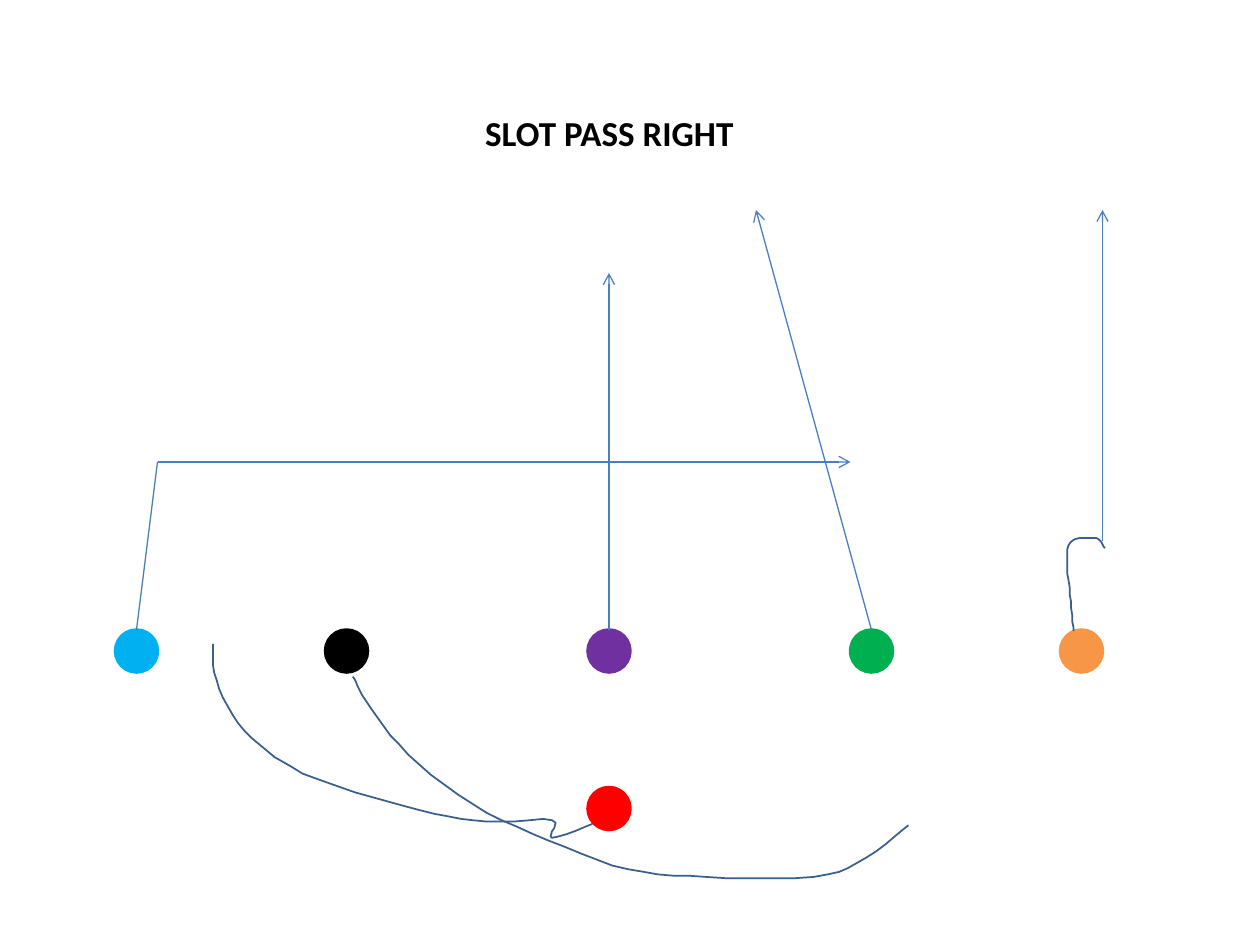
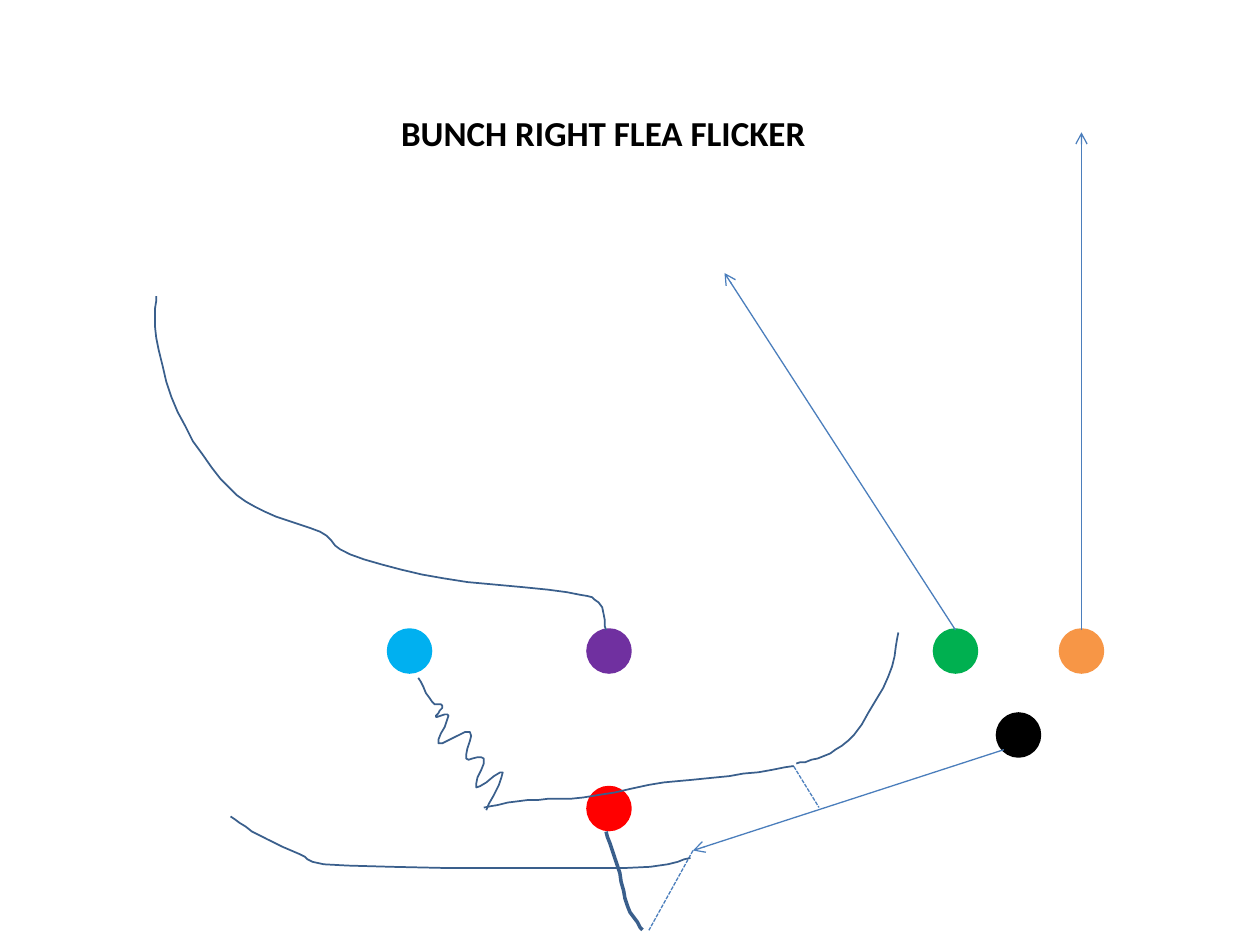
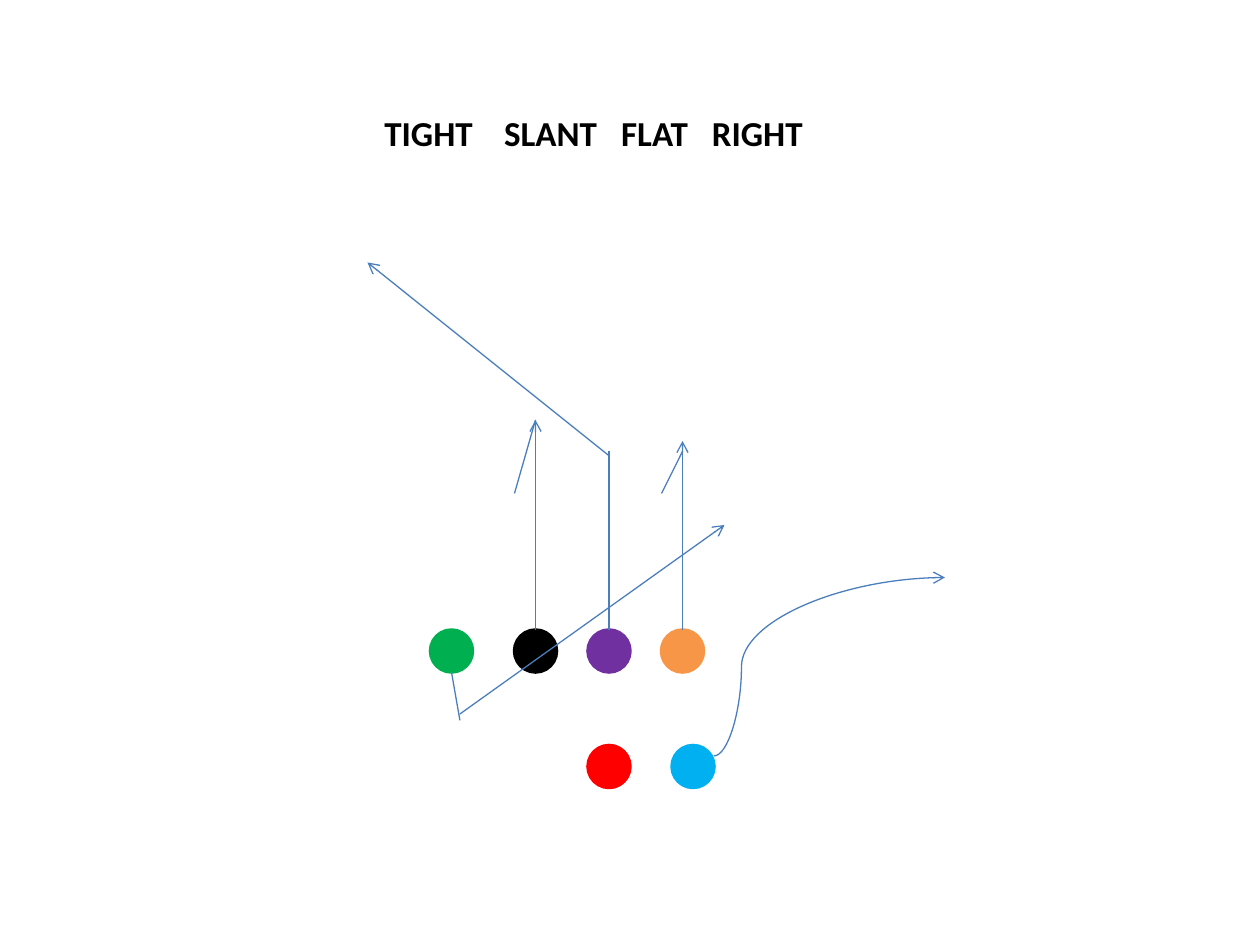
import pptx
import pptx.dml.color
import pptx.enum.dml
import pptx.enum.shapes
import pptx.enum.text
import pptx.oxml
import pptx.oxml.ns
import pptx.util

qn = pptx.oxml.ns.qn
STRAIGHT = pptx.enum.shapes.MSO_CONNECTOR.STRAIGHT
CURVE = pptx.enum.shapes.MSO_CONNECTOR.CURVE
FONT = "Calibri"
ROUTE_COLOUR = "4B7EBC"
STROKE_COLOUR = "3A5F8C"
PLAYER_COLOURS = {
    "purple": "7030A0", "green": "00B050", "orange": "F79646",
    "black": "000000", "blue": "00B0F0", "red": "FF0000",
}
COLUMNS = 120  # the field is a grid of 120 by 90 square cells
PLAYER_SIZE = 4
CENTRE, FRONT_ROW = 56, 60  # purple and red share the centre column
TITLE_ROW, TITLE_ROWS = 10, 5.3
CURVE_STEPS = 5

# Players, titles and routes are in cells; strokes in hundredths of an inch.
# A player stands in the front row unless "back" names another row.
# A route starts at a player's top or at a point, and ends in an arrow, plain or dashed.
PLAYS = [
    {
        "title": "SLOT PASS RIGHT", "title_left": 45, "title_width": 26.3, "tabs": [],
        "columns": {"green": 81, "orange": 101, "black": 31, "blue": 11},
        "back": {"red": 75},
        "routes": [
            ((58, 44), (58, 26), "arrow"),
            ((15, 44), (81, 44), "arrow"),
            ("green", (72, 20), "arrow"),
            ((105, 51.5), (105, 20), "arrow"),
            ("purple", (58, 43), "plain"),
            ("blue", (15, 44), "plain"),
        ],
        "strokes": [
            (1, [(280, 537), (295, 563), (324, 599), (375, 638), (435, 667),
                 (499, 690), (560, 696), (646, 696), (687, 681), (721, 655)]),
            (1, [(852, 501), (850, 477), (847, 450), (850, 430), (870, 427), (877, 435)]),
            (1, [(470, 654), (438, 665), (438, 651), (385, 652), (333, 643),
                 (251, 618), (212, 596), (185, 568), (170, 534), (169, 511)]),
        ],
    },
    {
        "title": "BUNCH RIGHT FLEA FLICKER", "title_left": 37, "title_width": 49.4, "tabs": [],
        "columns": {"green": 89, "orange": 101, "black": 95, "blue": 37},
        "back": {"black": 68, "red": 75},
        "routes": [
            ((95.6, 71.4), (66, 81), "arrow"),
            ("orange", (103, 12.6), "arrow"),
            ("green", (69, 26), "arrow"),
            ((75.6, 73), (78, 76.9), "dashed"),
            ((66, 81), (61.8, 88.6), "dashed"),
        ],
        "strokes": [
            (1, [(481, 500), (475, 478), (450, 470), (352, 459), (278, 440), (254, 422),
                 (210, 406), (175, 380), (141, 327), (124, 268), (124, 235)]),
            (1, [(332, 538), (343, 557), (351, 560), (346, 569), (356, 568), (348, 590),
                 (373, 581), (370, 602), (384, 602), (378, 625), (399, 613), (386, 643)]),
            (1, [(384, 641), (419, 635), (463, 633), (527, 621), (579, 616), (630, 608)]),
            (2, [(481, 660), (490, 687), (498, 719), (510, 738)]),
            (1, [(548, 681), (494, 689), (276, 687), (238, 678), (206, 663), (183, 648)]),
            (1, [(632, 606), (654, 600), (678, 583), (705, 537), (713, 502)]),
        ],
    },
    {
        "title": "TIGHT\tSLANT\tFLAT\tRIGHT", "title_left": 35.4, "title_width": 42.6,
        "tabs": [0.95, 1.88, 2.6],
        "columns": {"green": 41, "orange": 63, "black": 49, "blue": 64},
        "back": {"blue": 71, "red": 71},
        "routes": [
            ((43.8, 68), (69, 50), "arrow"),
            ("black", (51, 40), "arrow"),
            ("orange", (65, 42), "arrow"),
            ("purple", (58, 43), "plain"),
            ((65, 43), (63, 47), "plain"),
            ((51, 40), (49, 47), "plain"),
            ((58, 43.4), (35, 25), "arrow"),
            ((43, 64), (43.8, 68.6), "plain"),
            ((68, 72), (90, 55), "curved arrow"),
        ],
        "strokes": [],
    },
]


def colour(hex_string):
    return pptx.dml.color.RGBColor.from_string(hex_string)


deck = pptx.Presentation()
deck.slide_width = pptx.util.Inches(10)
deck.slide_height = pptx.util.Inches(7.5)
cell = deck.slide_width / COLUMNS


def cells(*counts):
    """Turn counts of grid cells into lengths."""
    return [pptx.util.Emu(round(count * cell)) for count in counts]


title_only = deck.slide_layouts.get_by_name("Title Only")
for play in PLAYS:
    page = deck.slides.add_slide(title_only)

    title = page.shapes.title
    title.left, title.top, title.width, title.height = cells(
        play["title_left"], TITLE_ROW, play["title_width"], TITLE_ROWS)
    frame = title.text_frame
    frame.text = play["title"]
    frame.word_wrap = True
    frame.auto_size = pptx.enum.text.MSO_AUTO_SIZE.NONE
    frame.vertical_anchor = pptx.enum.text.MSO_ANCHOR.TOP
    para = frame.paragraphs[0]
    para.alignment = pptx.enum.text.PP_ALIGN.LEFT
    para.font.name, para.font.size, para.font.bold = FONT, pptx.util.Pt(20), True
    para.font.color.rgb = colour("000000")
    if play["tabs"]:
        tab_list = pptx.oxml.parse_xml(f'<a:tabLst {pptx.oxml.ns.nsdecls("a")}/>')
        for stop in play["tabs"]:
            tab_list.append(tab_list.makeelement(
                qn("a:tab"), {"pos": str(pptx.util.Inches(stop)), "algn": "l"}))
        para._p.get_or_add_pPr().insert(0, tab_list)

    players = {}
    for name, hex_string in PLAYER_COLOURS.items():
        column = play["columns"].get(name, CENTRE)
        row = play["back"].get(name, FRONT_ROW)
        player = page.shapes.add_shape(
            pptx.enum.shapes.MSO_SHAPE.OVAL, *cells(column, row, PLAYER_SIZE, PLAYER_SIZE))
        player.shadow.inherit = False
        player.fill.solid()
        player.fill.fore_color.rgb = colour(hex_string)
        player.line.color.rgb = colour(hex_string)
        player.line.width = pptx.util.Pt(2)
        players[name] = player

    for start, end, style in play["routes"]:
        from_player = start in players
        first = (0, 0) if from_player else start
        kind = CURVE if "curved" in style else STRAIGHT
        route = page.shapes.add_connector(kind, *cells(*first, *end))
        if from_player:
            route.begin_connect(players[start], 0)
        route.line.color.rgb = colour(ROUTE_COLOUR)
        route.line.width = pptx.util.Pt(0.75)
        if style == "dashed":
            route.line.dash_style = pptx.enum.dml.MSO_LINE.SQUARE_DOT
        properties = route._element.spPr
        if "arrow" in style:
            outline = properties.find(qn("a:ln"))
            outline.append(outline.makeelement(qn("a:tailEnd"), {"type": "arrow"}))
        if kind == CURVE:
            guides = properties.find(qn("a:prstGeom")).get_or_add_avLst()
            guides.append(guides.makeelement(
                qn("a:gd"), {"name": "adj1", "fmla": "val 11900"}))
        properties.append(properties.makeelement(qn("a:effectLst"), {}))

    for width, points in play["strokes"]:
        # A Catmull-Rom spline rounds the stroke between its points.
        padded = [points[0], *points, points[-1]]
        smooth_points = []
        for before, start, end, after in zip(padded, padded[1:], padded[2:], padded[3:]):
            for step in range(1, CURVE_STEPS + 1):
                t = step / CURVE_STEPS
                smooth_points.append([
                    b + ((c - a) * t + (2 * a - 5 * b + 4 * c - d) * t ** 2
                         + (3 * b - a - 3 * c + d) * t ** 3) / 2
                    for a, b, c, d in zip(before, start, end, after)])
        builder = page.shapes.build_freeform(*points[0], scale=pptx.util.Inches(0.01))
        builder.add_line_segments(smooth_points, close=False)
        stroke = builder.convert_to_shape()
        stroke.shadow.inherit = False
        stroke.fill.background()
        stroke.line.color.rgb = colour(STROKE_COLOUR)
        stroke.line.width = pptx.util.Pt(width)

deck.save("out.pptx")
